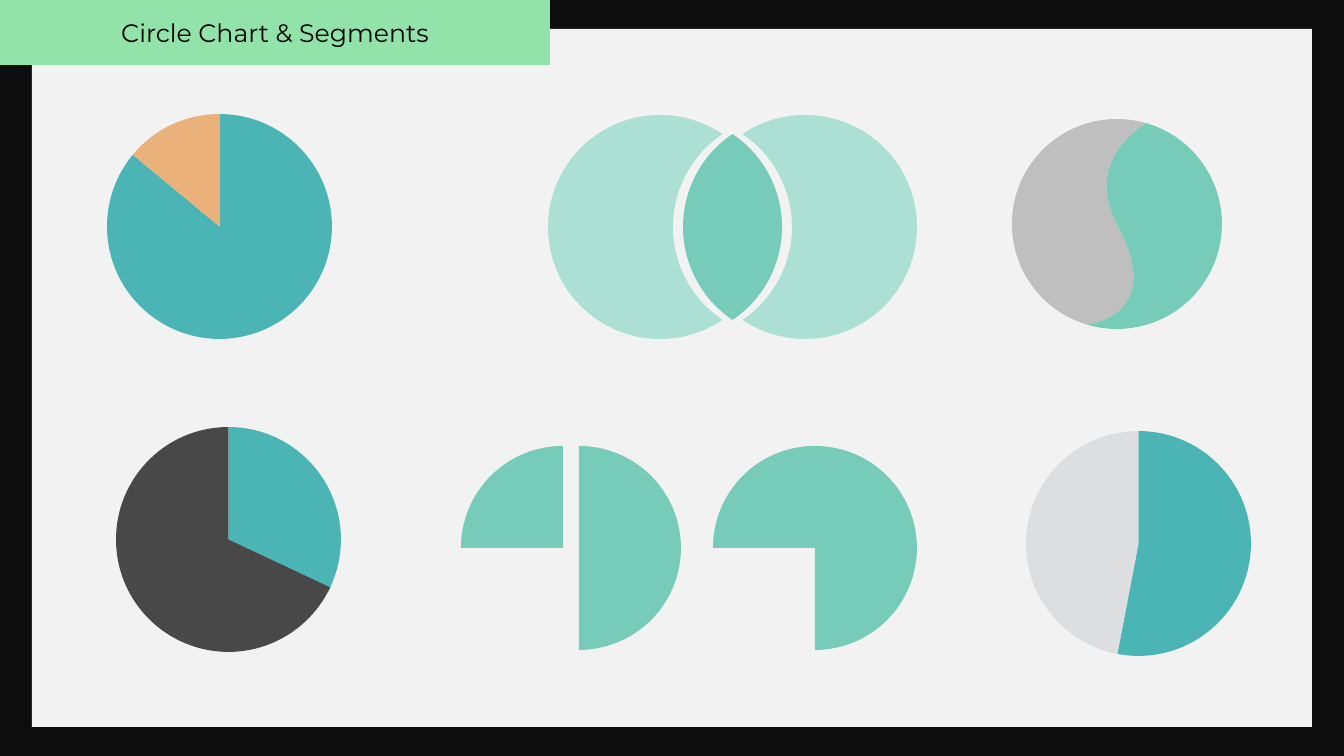
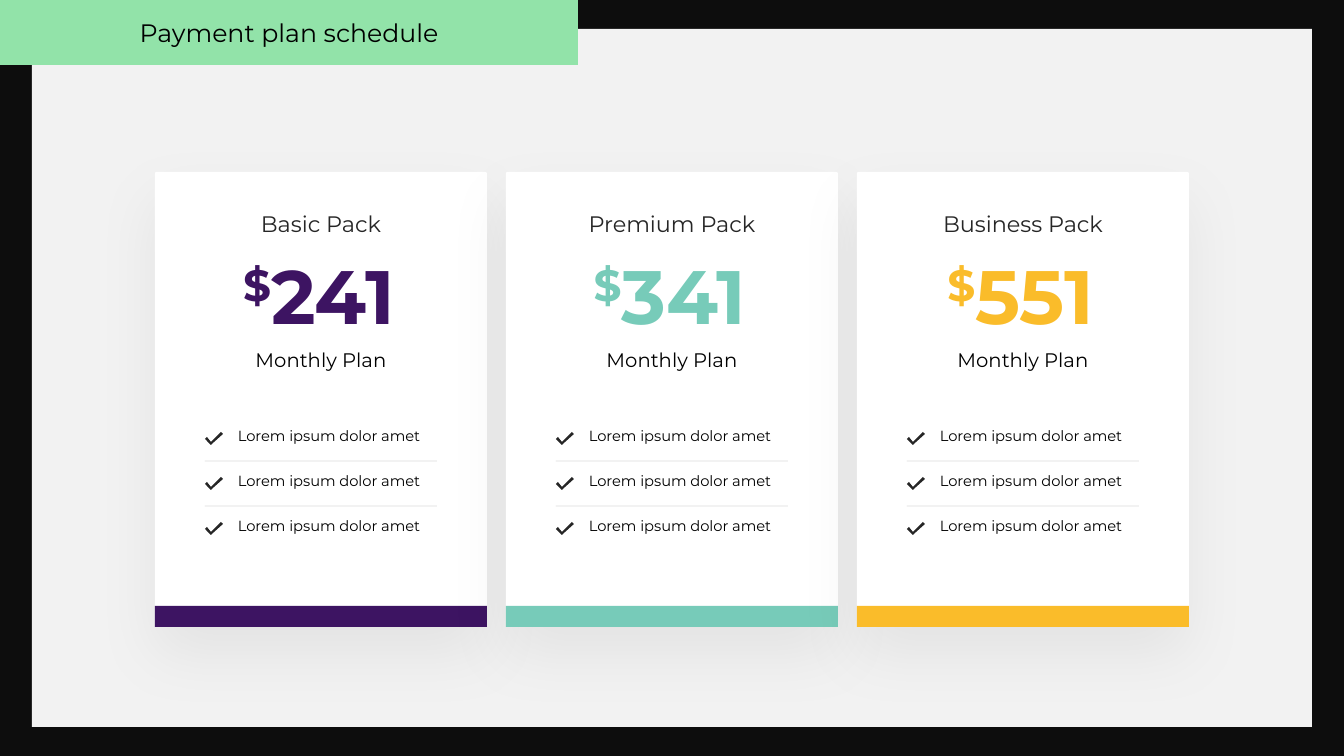
"""Build two slides: circle charts with segments, and a payment plan schedule."""
from math import acos, ceil, cos, degrees, radians, sin, tan

from lxml.etree import SubElement
from pptx import Presentation
from pptx.chart.data import CategoryChartData as Data
from pptx.dml.color import RGBColor as RGB
from pptx.enum.chart import XL_CHART_TYPE as Chart
from pptx.enum.shapes import MSO_CONNECTOR as Wire, MSO_SHAPE as Form
from pptx.enum.text import MSO_ANCHOR as Anchor, PP_ALIGN as Align
from pptx.oxml.ns import qn
from pptx.util import Emu, Pt

WIDE, HIGH = 1344, 756
SCALE = 12192000 / WIDE
FONT = "Montserrat"

BLACK = RGB(0, 0, 0)
INK = RGB(0x0D, 0x0D, 0x0D)
DARK = RGB(0x26, 0x26, 0x26)
PAPER = RGB(0xF2, 0xF2, 0xF2)
WHITE = RGB(0xFF, 0xFF, 0xFF)
RULE = RGB(0xD9, 0xD9, 0xD9)
LIME = RGB(0x92, 0xE3, 0xA9)
TEAL = RGB(0x4B, 0xB5, 0xB5)
MINT = RGB(0x77, 0xCB, 0xB9)
PALE = RGB(0xAD, 0xE0, 0xD5)
SAND = RGB(0xEB, 0xB1, 0x7B)
COAL = RGB(0x48, 0x48, 0x48)
MIST = RGB(0xDC, 0xDE, 0xE0)
GREY = RGB(0xBF, 0xBF, 0xBF)
PLUM = RGB(0x3D, 0x14, 0x62)
GOLD = RGB(0xFA, 0xBC, 0x2A)

PIES = [
    (107, 114, (86, 14), SAND),
    (116, 427, (32, 68), COAL),
    (1026, 431, (53, 47), MIST),
]
PIE = 225
SECTORS = [(563, 180, 270), (579, -90, 90), (815, -180, 90)]
SECTOR_Y, SECTOR_R = 548, 102
VENN_L, VENN_R, VENN_Y, VENN_RAD, VENN_GAP = 660, 805, 227, 112, 10
SWIRL_X, SWIRL_Y, SWIRL_R, SWIRL_TILT = 1117, 224, 105, 106.5
SWIRL = [(1147, 123), (1147, 123), (1082, 158), (1117, 224),
         (1167, 317), (1087, 325), (1087, 325)]

PLANS = [
    ("Basic Pack", "241", PLUM),
    ("Premium Pack", "341", MINT),
    ("Business Pack", "551", GOLD),
]
TERM = "Monthly Plan"
ITEMS = ["Lorem ipsum dolor amet"] * 3
CARD_X, CARD_Y, CARD_W, CARD_H, CARD_STEP = 155, 172, 332, 455, 351
BAR_H, ITEM_Y, ITEM_STEP = 21, 422, 45
TICK = [(16, 0), (6, 10), (2, 5), (0, 7), (6, 13), (8, 11), (18, 2)]


def px(*sizes):
    return [Emu(round(size * SCALE)) for size in sizes]


def paint(shape, color):
    shape.shadow.inherit = False
    shape.fill.solid()
    shape.fill.fore_color.rgb = color
    shape.line.fill.background()
    return shape


def block(slide, box, color, form=Form.RECTANGLE):
    return paint(slide.shapes.add_shape(form, *px(*box)), color)


def panel(slide, box, color):
    shape = block(slide, box, color, Form.ROUNDED_RECTANGLE)
    shape.adjustments[0] = 0.005
    return shape


def outline(slide, points, color):
    dots = [px(*point) for point in points]
    pen = slide.shapes.build_freeform(*dots[0], scale=1.0)
    pen.add_line_segments(dots[1:], close=True)
    return paint(pen.convert_to_shape(), color)


def curve(slide, points, color):
    shape = outline(slide, points, color)
    lines = list(shape._element.iter(qn("a:lnTo")))[:len(points) - 1]
    for trio in zip(lines[::3], lines[1::3], lines[2::3]):
        bend = trio[0].makeelement(qn("a:cubicBezTo"))
        trio[0].addprevious(bend)
        for line in trio:
            bend.append(line[0])
            line.getparent().remove(line)


def arc(x, y, rad, start, end):
    count = 2 * ceil(abs(end - start) / 90)
    step = radians(end - start) / count
    pull = 4 / 3 * tan(step / 4)

    def spot(turn, side):
        return (x + rad * (cos(turn) - side * sin(turn)),
                y + rad * (sin(turn) + side * cos(turn)))

    points = [spot(radians(start), 0)]
    for i in range(count):
        turn = radians(start) + i * step
        points += [spot(turn, pull), spot(turn + step, -pull),
                   spot(turn + step, 0)]
    return points


def style(para, size, color, align=Align.CENTER, bold=False):
    para.alignment = align
    font = para.font
    font.name, font.size, font.bold = FONT, Pt(size), bold
    font.color.rgb = color


def label(slide, box, text, size, color, **look):
    frame = slide.shapes.add_textbox(*px(*box)).text_frame
    frame.word_wrap = True
    para = frame.paragraphs[0]
    para.add_run().text = text
    style(para, size, color, **look)
    return para


def fade(tint, share):
    SubElement(tint, qn("a:alpha"), val=str(share * 1000))


def start(deck, title, width):
    slide = deck.slides.add_slide(deck.slide_layouts[6])
    block(slide, (32, 29, 1280, 698), PAPER)
    frame = block(slide, (0, 0, width, 65), LIME).text_frame
    frame.vertical_anchor = Anchor.MIDDLE
    frame.paragraphs[0].add_run().text = title
    style(frame.paragraphs[0], 18, BLACK)
    return slide


def pie(slide, x, y, values, color):
    data = Data()
    data.categories = ["1", "2"]
    data.add_series("Region 1", values)
    chart = slide.shapes.add_chart(Chart.PIE, *px(x, y, PIE, PIE), data).chart
    chart.has_title = chart.has_legend = False
    chart.font.name, chart.font.size = FONT, Pt(10)
    chart.font.color.rgb = BLACK
    plot = chart.plots[0]
    plot.vary_by_categories = False
    series = plot.series[0]
    for part, tint in [(series, TEAL), (series.points[0], TEAL),
                       (series.points[1], color)]:
        part.format.fill.solid()
        part.format.fill.fore_color.rgb = tint
        part.format.line.fill.background()
    area = chart._chartSpace.chart.plotArea
    for old in area.findall(qn("c:layout")):
        area.remove(old)
    layout = SubElement(area, qn("c:layout"))
    area.insert(0, layout)
    manual = SubElement(layout, qn("c:manualLayout"))
    for tag, val in [("layoutTarget", "inner"), ("xMode", "edge"),
                     ("yMode", "edge"), ("x", "0"), ("y", "0"),
                     ("w", "1"), ("h", "1")]:
        SubElement(manual, qn("c:" + tag), val=val)


def venn(slide):
    y, rad, gap = VENN_Y, VENN_RAD, VENN_GAP
    half = degrees(acos((VENN_R - VENN_L - 2 * gap) / 2 / rad))
    left = arc(VENN_L, y, rad, half, 360 - half)
    left += arc(VENN_R - 2 * gap, y, rad, 180 + half, 180 - half)[1:]
    right = [(VENN_L + VENN_R - x, v) for x, v in left]
    lens = arc(VENN_L + gap, y, rad, -half, half)
    lens += arc(VENN_R - gap, y, rad, 180 - half, 180 + half)[1:]
    for points, color in [(left, PALE), (right, PALE), (lens, MINT)]:
        curve(slide, points, color)


def swirl(slide):
    for turn, wave, color in [(0, SWIRL, GREY), (180, SWIRL[::-1], MINT)]:
        edge = SWIRL_TILT + turn
        rim = arc(SWIRL_X, SWIRL_Y, SWIRL_R, edge, edge + 180)
        curve(slide, rim + wave[1:], color)


def circles(deck):
    slide = start(deck, "Circle Chart & Segments", 550)
    for row in PIES:
        pie(slide, *row)
    venn(slide)
    swirl(slide)
    for x, a, b in SECTORS:
        hub = (x, SECTOR_Y)
        rim = arc(*hub, SECTOR_R, a, b)
        curve(slide, [hub, hub, rim[0]] + rim, MINT)


def drop(shape):
    effects = next(shape._element.iter(qn("a:effectLst")))
    outer = SubElement(effects, qn("a:outerShdw"), blurRad=str(Pt(45)),
                       dist=str(Pt(20)), dir="5400000", algn="t",
                       rotWithShape="0")
    fade(SubElement(outer, qn("a:srgbClr"), val=str(BLACK)), 5)


def rule(slide, x, y, end):
    line = slide.shapes.add_connector(Wire.STRAIGHT, *px(x, y, end, y))
    line.line.width = Pt(1)
    line.line.color.rgb = RULE
    fade(next(line._element.iter(qn("a:srgbClr"))), 50)
    SubElement(line._element.spPr, qn("a:effectLst"))


def card(slide, x, name, price, color):
    drop(panel(slide, (x, CARD_Y, CARD_W, CARD_H), WHITE))
    panel(slide, (x, CARD_Y + CARD_H - BAR_H, CARD_W, BAR_H), color)
    label(slide, (x + 28, 205, 276, 37), name, 16, DARK)
    para = label(slide, (x + 64, 244, 200, 102), "$", 54, color, bold=True)
    para.runs[0]._r.get_or_add_rPr().set("baseline", "30000")
    para.add_run().text = price
    label(slide, (x + 41, 336, 250, 38), TERM, 14, BLACK).line_spacing = 1.3
    for i, item in enumerate(ITEMS):
        y = ITEM_Y + i * ITEM_STEP
        label(slide, (x + 73, y, 210, 28), item, 10.5, BLACK, align=Align.LEFT)
        outline(slide, [(x + 50 + a, y + 10 + b) for a, b in TICK], DARK)
        if i:
            rule(slide, x + 50, y - 6, x + 282)


def prices(deck):
    slide = start(deck, "Payment plan schedule", 578)
    for i, plan in enumerate(PLANS):
        card(slide, CARD_X + i * CARD_STEP, *plan)


def main():
    deck = Presentation()
    deck.slide_width, deck.slide_height = px(WIDE, HIGH)
    back = deck.slide_master.background.fill
    back.solid()
    back.fore_color.rgb = INK
    circles(deck)
    prices(deck)
    deck.save("out.pptx")


if __name__ == "__main__":
    main()
